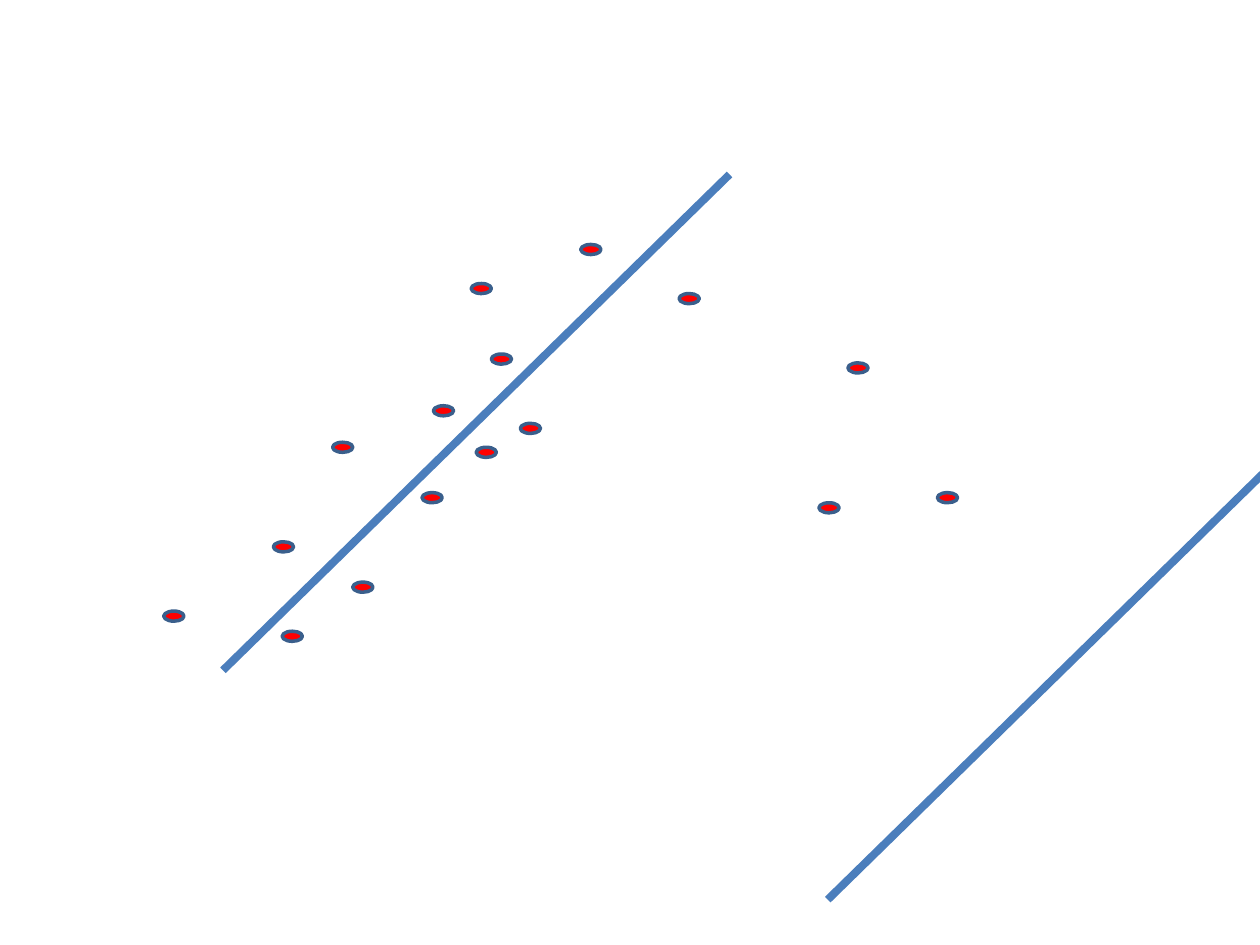
from dataclasses import dataclass

import pptx
import pptx.dml.color
import pptx.enum.shapes
import pptx.oxml
import pptx.oxml.ns
import pptx.util


@dataclass(frozen=True)
class Theme:
    background: str = "FFFFFF"
    point_fill: str = "FF0000"
    point_edge: str = "3A5F8C"
    trend: str = "4B7EBC"
    point_edge_width: float = 2
    trend_width: float = 4.5


COLUMNS, ROWS = 100, 75
POINT_SIZE = (1.6, 0.8)

# Left and top of each point, in columns and rows
CLUSTER = [
    (28, 46.2), (26.4, 35.1), (13, 48.5), (39, 28.1), (33.5, 39.1),
    (21.7, 43), (22.4, 50.1), (41.3, 33.6), (37.4, 22.5), (34.4, 32.2),
    (46.1, 19.4), (37.8, 35.5), (53.9, 23.3),
]
OUTLIERS = [(67.3, 28.8), (65, 39.9), (74.4, 39.1)]

# Start of each trend line, and the rise both share
TREND_STARTS = [(17.7, 53.2), (65.7, 71.4)]
TREND_RUN, TREND_RISE = 40.2, 39.35


class ScatterSlide:
    def __init__(self, deck, theme):
        self.theme = theme
        self.column = deck.slide_width / COLUMNS
        self.row = deck.slide_height / ROWS
        self.slide = deck.slides.add_slide(deck.slide_layouts[6])
        background = self.slide.background.fill
        background.solid()
        background.fore_color.rgb = self.color(theme.background)

    @staticmethod
    def color(value):
        return pptx.dml.color.RGBColor.from_string(value)

    def place(self, column, row):
        return round(column * self.column), round(row * self.row)

    def stroke(self, line, color, width):
        line.color.rgb = self.color(color)
        line.width = pptx.util.Pt(width)

    def point(self, column, row):
        dot = self.slide.shapes.add_shape(
            pptx.enum.shapes.MSO_SHAPE.OVAL,
            *self.place(column, row), *self.place(*POINT_SIZE))
        dot.shadow.inherit = False
        dot.fill.solid()
        dot.fill.fore_color.rgb = self.color(self.theme.point_fill)
        self.stroke(dot.line, self.theme.point_edge, self.theme.point_edge_width)

    def trend(self, column, row):
        trend = self.slide.shapes.add_connector(
            pptx.enum.shapes.MSO_CONNECTOR.STRAIGHT,
            *self.place(column, row),
            *self.place(column + TREND_RUN, row - TREND_RISE))
        self.stroke(trend.line, self.theme.trend, self.theme.trend_width)
        # An empty effect list removes the connector's shadow
        properties = trend.element.find(pptx.oxml.ns.qn("p:spPr"))
        properties.append(pptx.oxml.parse_xml(
            f"<a:effectLst {pptx.oxml.ns.nsdecls('a')}/>"))


def main():
    deck = pptx.Presentation()
    deck.slide_width = pptx.util.Inches(10)
    deck.slide_height = pptx.util.Inches(7.5)
    scatter = ScatterSlide(deck, Theme())

    # Data points
    for position in CLUSTER + OUTLIERS:
        scatter.point(*position)

    # Parallel trend lines
    for start in TREND_STARTS:
        scatter.trend(*start)

    deck.save("out.pptx")


if __name__ == "__main__":
    main()
